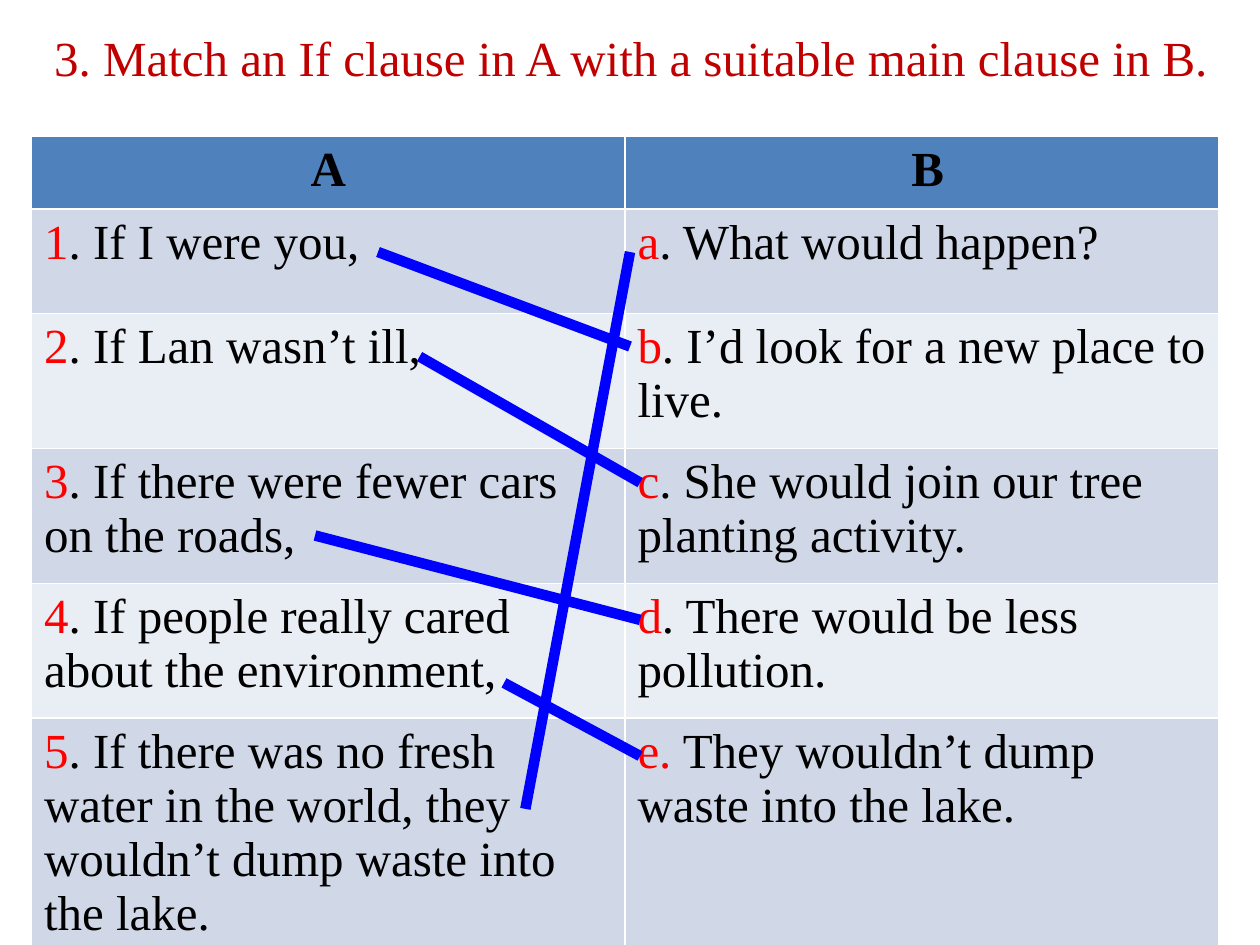
from pptx import Presentation
from pptx.dml.color import RGBColor
from pptx.enum.shapes import MSO_CONNECTOR
from pptx.enum.text import MSO_ANCHOR, PP_ALIGN
from pptx.oxml.ns import qn
from pptx.util import Emu, Pt
from lxml.etree import SubElement

FONT = "Times New Roman"
TITLE_RED = RGBColor(0xC0, 0x00, 0x00)
LABEL_RED = RGBColor(0xFF, 0x00, 0x00)
BLACK = RGBColor(0x00, 0x00, 0x00)
LINE_BLUE = RGBColor(0x00, 0x00, 0xFF)
HEADER_FILL = RGBColor(0x4F, 0x81, 0xBD)
ROW_FILLS = [RGBColor(0xD0, 0xD8, 0xE8), RGBColor(0xE9, 0xED, 0xF4)]


def px(length):
    return Emu(length * 9144)


def style_run(run, color, bold=False):
    run.font.name = FONT
    run.font.size = Pt(28)
    run.font.bold = bold
    run.font.color.rgb = color


presentation = Presentation()
presentation.slide_width = px(1000)
presentation.slide_height = px(750)
slide = presentation.slides.add_slide(presentation.slide_layouts[5])

title = slide.shapes.title
title.left, title.top, title.width, title.height = px(33), px(-17), px(967), px(125)
title.text_frame.text = "3. Match an If clause in A with a suitable main clause in B."
title.text_frame.vertical_anchor = MSO_ANCHOR.MIDDLE
title.text_frame.paragraphs[0].alignment = PP_ALIGN.LEFT
style_run(title.text_frame.paragraphs[0].runs[0], TITLE_RED)

clause_rows = [
    [("1", ". If I were you,"), ("a", ". What would happen?")],
    [("2", ". If Lan wasn’t ill,"), ("b", ". I’d look for a new place to live.")],
    [("3", ". If there were fewer cars on the roads,"),
     ("c", ". She would join our tree planting activity.")],
    [("4", ". If people really cared about the environment,"),
     ("d", ". There would be less pollution.")],
    [("5", ". If there was no fresh water in the world, they wouldn’t dump waste into the lake."),
     ("e.", " They wouldn’t dump waste into the lake.")],
]
row_heights = [58, 83, 107, 107, 107, 107]

table = slide.shapes.add_table(6, 2, px(25), px(108), px(942), px(sum(row_heights))).table
for row, height in zip(table.rows, row_heights):
    row.height = px(height)

for column, heading in enumerate(["A", " B"]):
    cell = table.cell(0, column)
    cell.fill.solid()
    cell.fill.fore_color.rgb = HEADER_FILL
    cell.text_frame.text = heading
    paragraph = cell.text_frame.paragraphs[0]
    paragraph.alignment = PP_ALIGN.CENTER
    style_run(paragraph.runs[0], BLACK, bold=True)

for row_index, clauses in enumerate(clause_rows):
    for column, clause in enumerate(clauses):
        cell = table.cell(row_index + 1, column)
        cell.fill.solid()
        cell.fill.fore_color.rgb = ROW_FILLS[row_index % 2]
        paragraph = cell.text_frame.paragraphs[0]
        for text, color in zip(clause, [LABEL_RED, BLACK]):
            run = paragraph.add_run()
            run.text = text
            style_run(run, color)

match_lines = [
    (300, 200, 500, 275),
    (333, 283, 508, 383),
    (250, 425, 508, 492),
    (400, 542, 508, 600),
    (417, 642, 500, 200),
]
for ends in match_lines:
    connector = slide.shapes.add_connector(MSO_CONNECTOR.STRAIGHT, *map(px, ends))
    connector.line.color.rgb = LINE_BLUE
    connector.line.width = Pt(6)
    SubElement(connector._element.spPr, qn("a:effectLst"))

presentation.save("out.pptx")
